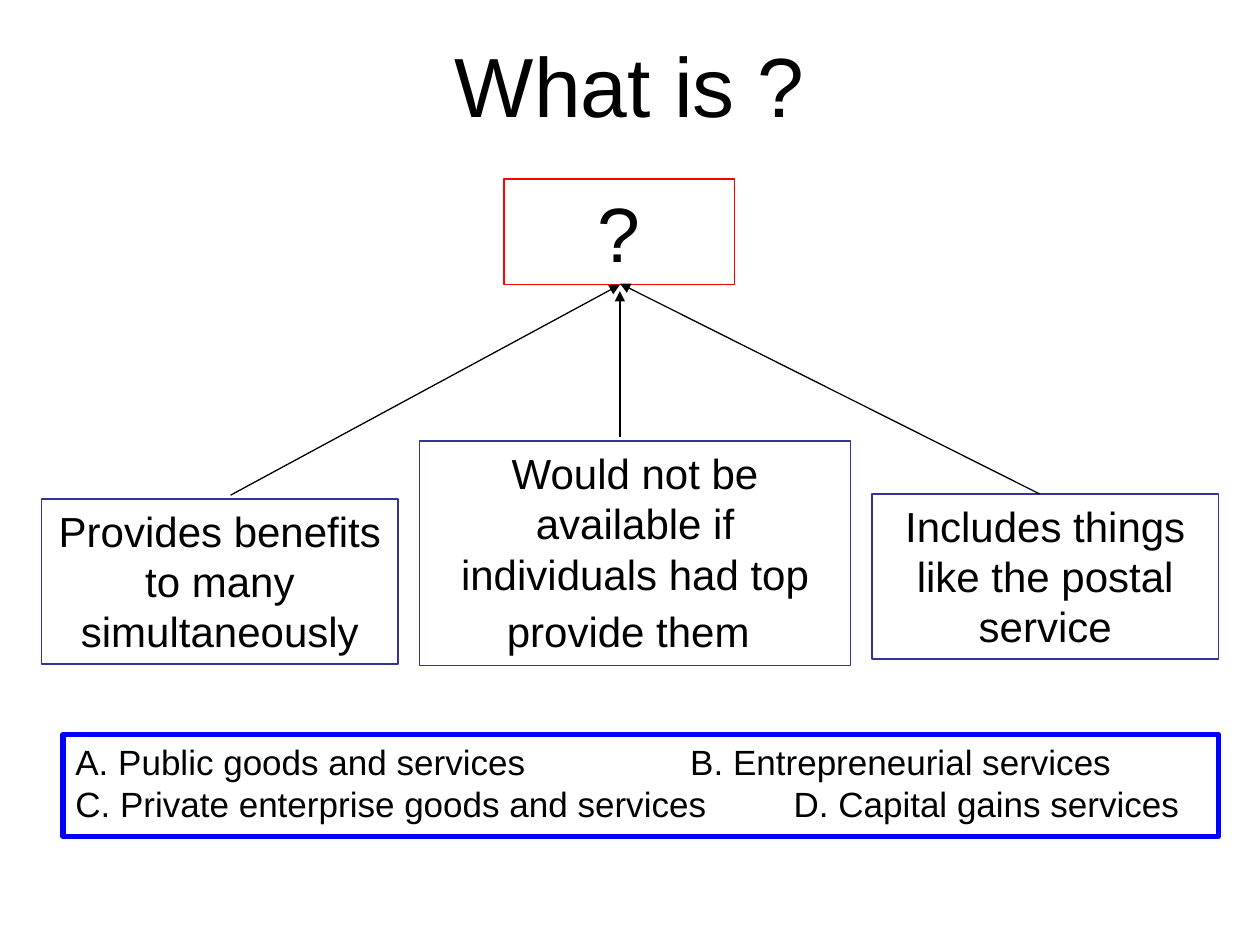
import pptx
import pptx.util
from lxml import etree
from pptx.dml.color import RGBColor
from pptx.enum.shapes import MSO_CONNECTOR
from pptx.enum.text import MSO_ANCHOR, PP_ALIGN
from pptx.oxml.ns import qn
from pptx.util import Inches

FONT = "Arial"
COLORS = {"text": "000000", "feature": "333399", "question": "FF0000", "answers": "0000FF"}


def rgb(name):
    return RGBColor.from_string(COLORS[name])


def add_run(p, text, size):
    r = p.add_run()
    r.text = text
    r.font.name = FONT
    r.font.size = pptx.util.Pt(size)
    r.font.color.rgb = rgb("text")


def add_tab_stop(p, pos):
    tabs = etree.SubElement(p._p.get_or_add_pPr(), qn("a:tabLst"))
    etree.SubElement(tabs, qn("a:tab"), pos=str(Inches(pos)), algn="l")


def add_text(s, at, lines, size=24, line=None, width=0.75,
             align=PP_ALIGN.CENTER, anchor=MSO_ANCHOR.TOP, tabs=()):
    """Add a text box, framed if line names a colour; return its paragraphs."""
    sp = s.shapes.add_textbox(*map(Inches, at))
    if line:
        sp.line.color.rgb = rgb(line)
        sp.line.width = pptx.util.Pt(width)
    tf = sp.text_frame
    tf.word_wrap = True
    tf.vertical_anchor = anchor
    for i, text in enumerate(lines):
        p = tf.add_paragraph() if i else tf.paragraphs[0]
        p.alignment = align
        add_run(p, text, size)
        if tabs:
            add_tab_stop(p, tabs[i])
    return tf.paragraphs


def add_arrow(s, start, end):
    c = s.shapes.add_connector(MSO_CONNECTOR.STRAIGHT, *map(Inches, start + end))
    c.line.color.rgb = rgb("text")
    c.line.width = pptx.util.Pt(0.75)
    etree.SubElement(c.line._get_or_add_ln(), qn("a:tailEnd"), type="triangle")
    etree.SubElement(c._element.spPr, qn("a:effectLst"))


def main():
    prs = pptx.Presentation()
    prs.slide_width, prs.slide_height = Inches(10), Inches(7.5)
    s = prs.slides.add_slide(prs.slide_layouts[6])

    add_text(s, (0.5, 0.04, 9, 1.25), ["What is ?"], size=48, anchor=MSO_ANCHOR.MIDDLE)

    add_text(s, (6.92, 3.92, 2.75, 1.31), ["Includes things like the postal service"],
             line="feature")
    add_text(s, (0.33, 3.96, 2.83, 1.31), ["Provides benefits to many simultaneously"],
             line="feature")
    middle = add_text(s, (3.33, 3.5, 3.42, 1.78),
                      ["Would not be available if individuals had top provide them"],
                      line="feature")
    add_run(middle[0], " ", 28)
    add_text(s, (4, 1.42, 1.83, 0.84), ["?"], size=44, line="question")

    for start, tip_y in (((1.83, 3.93), 2.26), ((4.92, 3.47), 2.31), ((8.25, 3.92), 2.25)):
        add_arrow(s, start, (4.92, tip_y))

    add_text(s, (0.5, 5.83, 9.17, 0.81),
             ["A. Public goods and services\tB. Entrepreneurial services",
              "C. Private enterprise goods and services\tD. Capital gains services"],
             size=20, line="answers", width=3, align=PP_ALIGN.LEFT, tabs=(4.88, 5.7))

    prs.save("out.pptx")


if __name__ == "__main__":
    main()
